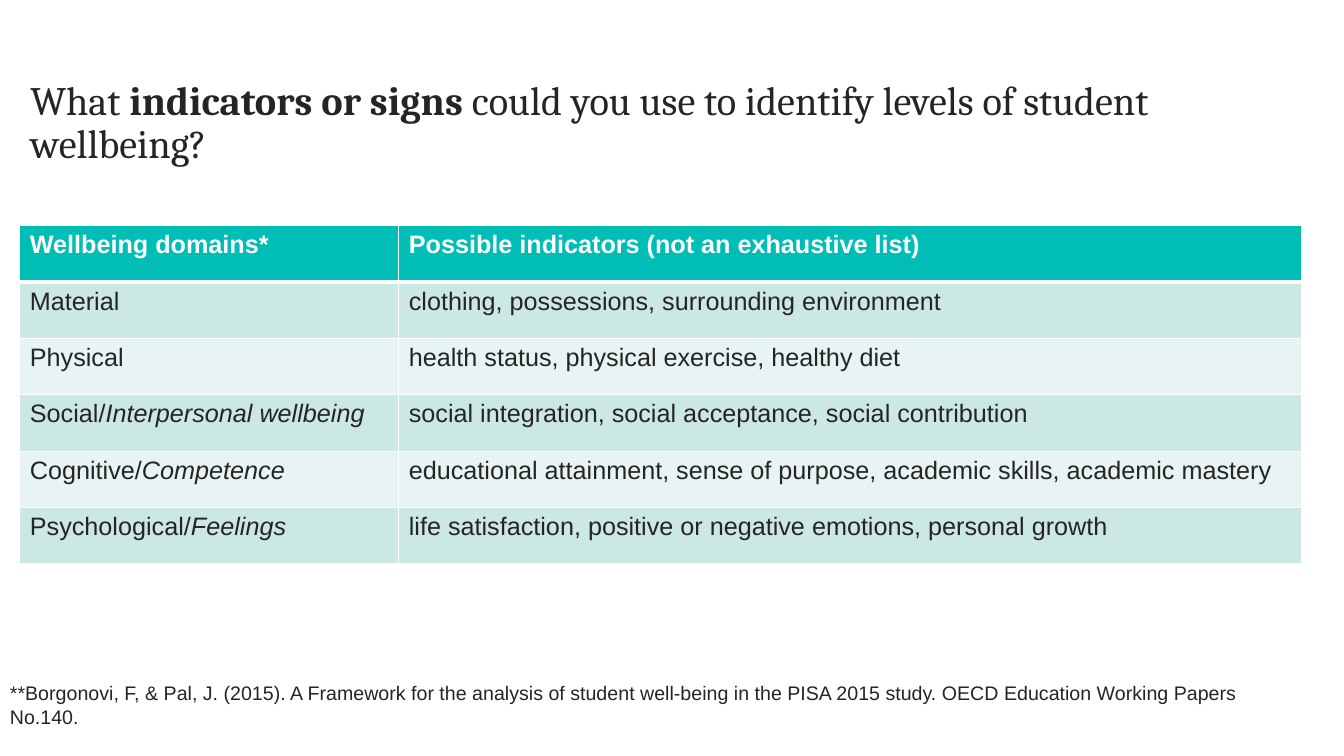
from pptx import Presentation
from pptx.dml.color import RGBColor
from pptx.enum.text import MSO_ANCHOR as Anchor, MSO_AUTO_SIZE as AutoSize, PP_ALIGN as Align
from pptx.oxml.ns import qn
from pptx.util import Cm, Pt
from lxml.etree import SubElement

INK = RGBColor(0x25, 0x25, 0x25)
WHITE = RGBColor(0xFF, 0xFF, 0xFF)
TEAL = RGBColor(0x00, 0xBD, 0xB6)
BANDS = RGBColor(0xCC, 0xE8, 0xE5), RGBColor(0xE7, 0xF4, 0xF3)

TITLE = [("What ", ""), ("indicators or signs", "b"),
         (" could you use to identify levels of student wellbeing?", "")]
HEADER = ([("Wellbeing domains*", "b")], [("Possible indicators (not an exhaustive list)", "b")])
DOMAINS = [
    ("Material", "", "clothing, possessions, surrounding environment"),
    ("Physical", "", "health status, physical exercise, healthy diet"),
    ("Social/", "Interpersonal wellbeing", "social integration, social acceptance, social contribution"),
    ("Cognitive/", "Competence",
     "educational attainment, sense of purpose, academic skills, academic mastery"),
    ("Psychological/", "Feelings", "life satisfaction, positive or negative emotions, personal growth"),
]
SOURCE = ("**Borgonovi, F, & Pal, J. (2015). A Framework for the analysis of student well-being "
          "in the PISA 2015 study. OECD Education Working Papers No.140.")


class SlideBuilder:
    heading_font = "Cambria"
    body_font = "Arial"

    def __init__(self, slide):
        self.slide = slide

    def add_runs(self, paragraph, pieces, font_name, size, color):
        paragraph.alignment = Align.LEFT
        for text, style in pieces:
            run = paragraph.add_run()
            run.text = text
            font = run.font
            font.name, font.size = font_name, Pt(size)
            font.bold, font.italic = style == "b", style == "i"
            font.color.rgb = color

    def title(self, pieces, left, top, width, height):
        shape = self.slide.shapes.title
        shape.left, shape.top, shape.width, shape.height = Cm(left), Cm(top), Cm(width), Cm(height)
        frame = shape.text_frame
        frame.auto_size = AutoSize.NONE
        frame.word_wrap = True
        frame.vertical_anchor = Anchor.BOTTOM
        frame.margin_bottom = Cm(0.58)
        paragraph = frame.paragraphs[0]
        paragraph.line_spacing = 0.9
        self.add_runs(paragraph, pieces, self.heading_font, 28.8, INK)

    def text(self, content, left, top, width, height):
        shape = self.slide.shapes.add_textbox(Cm(left), Cm(top), Cm(width), Cm(height))
        frame = shape.text_frame
        frame.word_wrap = True
        frame.auto_size = AutoSize.SHAPE_TO_FIT_TEXT
        self.add_runs(frame.paragraphs[0], [(content, "")], self.body_font, 14, INK)

    def borders(self, cell, top, bottom):
        properties = cell._tc.get_or_add_tcPr()
        for side, width in (("L", 1), ("R", 1), ("T", top), ("B", bottom)):
            line = SubElement(properties, qn(f"a:ln{side}"), w=str(Pt(width)))
            fill = SubElement(line, qn("a:solidFill"))
            SubElement(fill, qn("a:srgbClr"), val=str(WHITE))

    def table(self, rows, left, top, widths, row_height):
        frame = self.slide.shapes.add_table(len(rows), len(widths), Cm(left), Cm(top),
                                            Cm(sum(widths)), Cm(row_height * len(rows)))
        table = frame.table
        for column, width in zip(table.columns, widths):
            column.width = Cm(width)
        for index, row in enumerate(rows):
            table.rows[index].height = Cm(row_height)
            is_header = index == 0
            for position, pieces in enumerate(row):
                cell = table.cell(index, position)
                self.borders(cell, 3 if index == 1 else 1, 3 if is_header else 1)
                cell.fill.solid()
                cell.fill.fore_color.rgb = TEAL if is_header else BANDS[(index - 1) % 2]
                self.add_runs(cell.text_frame.paragraphs[0], pieces, self.body_font, 18,
                              WHITE if is_header else INK)


def main():
    presentation = Presentation()
    presentation.slide_width, presentation.slide_height = Cm(33.87), Cm(19.05)
    builder = SlideBuilder(presentation.slides.add_slide(presentation.slide_layouts[5]))
    builder.title(TITLE, 0.51, 2.79, 32.31, 2.01)
    rows = [HEADER]
    for domain, aspect, indicators in DOMAINS:
        label = [(domain, "")] + ([(aspect, "i")] if aspect else [])
        rows.append((label, [(indicators, "")]))
    builder.table(rows, 0.5, 5.69, (9.55, 22.76), 1.42)
    builder.text(SOURCE, 0, 17.04, 32.79, 1.45)
    presentation.save("out.pptx")


if __name__ == "__main__":
    main()
